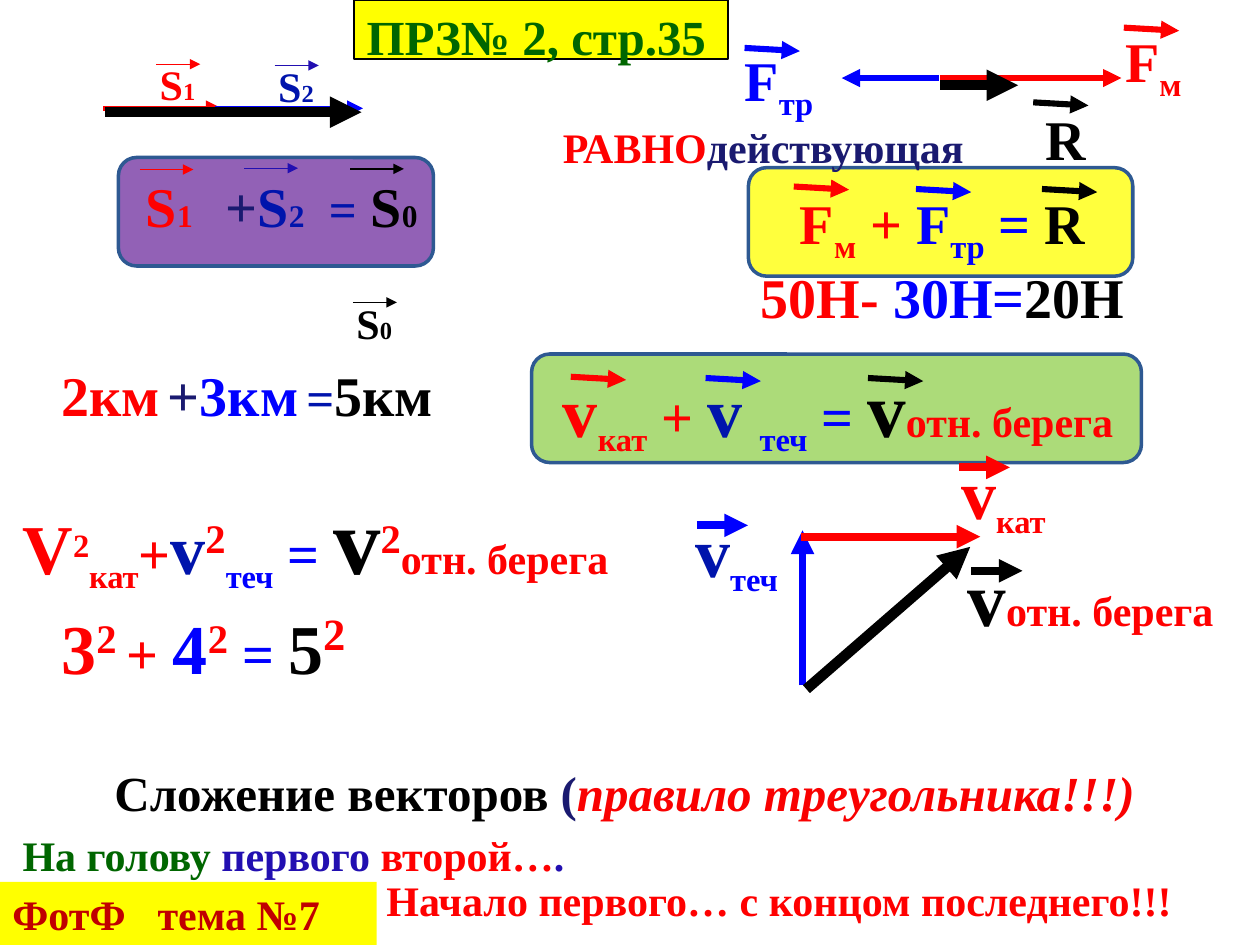
from lxml import etree
from pptx import Presentation
from pptx.dml.color import RGBColor
from pptx.enum import shapes, text
from pptx.oxml import ns
from pptx.util import Pt

RED = RGBColor(0xFF, 0x00, 0x00)
BLUE = RGBColor(0x00, 0x00, 0xFF)
NAVY = RGBColor(0x00, 0x14, 0xAC)
INDIGO = RGBColor(0x22, 0x0F, 0xB1)
DARK = RGBColor(0x1A, 0x1A, 0x70)
BLACK = RGBColor(0x00, 0x00, 0x00)
GREEN = RGBColor(0x00, 0x66, 0x00)
CRIMSON = RGBColor(0xC0, 0x00, 0x00)
SCARLET = RGBColor(0xF9, 0x01, 0x01)
YELLOW = RGBColor(0xFF, 0xFF, 0x00)
LIME = RGBColor(0x92, 0xD0, 0x50)
PURPLE = RGBColor(0x70, 0x30, 0xA0)
FRAME = RGBColor(0x2E, 0x59, 0x92)

FONT = "Times New Roman"
SUB, SUP = -25, 30

# left, top, width, height, fill
PANELS = [
    (303.8, 202.3, 348.5, 62, LIME),
    (427.7, 95.8, 219.6, 62, YELLOW),
    (67.7, 90, 180, 62, PURPLE),
]

# start x, start y, end x, end y, colour, weight
VECTORS = [
    (59, 61.9, 126.7, 61.9, RED, 3),
    (123.1, 61.9, 207.4, 61.9, BLUE, 3),
    (59.8, 64.1, 206.6, 64.1, BLACK, 6),
    (537.1, 44.6, 640.8, 44.6, RED, 3.5),
    (536.4, 44.6, 481, 44.6, BLUE, 3.5),
    (537.1, 48.7, 581.8, 48.7, BLACK, 6),
    (458.6, 391.7, 458.6, 303.1, BLUE, 4.5),
    (457.9, 306.7, 560.2, 306.7, RED, 4.5),
    (460.8, 393.8, 554.4, 312.5, BLACK, 6),
]

# Small arrows over letters: (length, drop, weight), then left, top, colour
MARKS = [
    ((25.2, 0, 0.75), [(89.3, 36.7, RED), (157, 37.4, INDIGO), (201.6, 172.8, BLACK)]),
    ((30.6, 0, 0.75), [(79.9, 96.9, RED), (139.7, 96.1, INDIGO), (200.2, 96.5, BLACK)]),
    ((31.6, 1.8, 3.5), [
        (523.4, 108, BLUE), (595.4, 108, BLACK), (453.6, 106.6, RED),
        (642.2, 15.8, RED), (425.5, 27.4, BLUE), (590.4, 58.5, BLACK),
        (403.2, 216, BLUE), (496, 216, BLACK), (326.2, 215.3, RED)]),
    ((29.2, 0, 4.5), [(555.1, 326.2, BLACK), (547.9, 267.1, RED), (398.2, 300.2, BLUE)]),
]

# (left, top, width, height), tab stops, spans of (text, size, colour, baseline, italic)
TEXTS = [
    ((84.2, 30.2, 45.4, 36), [], [("S", 24, RED), ("1", 14, RED)]),
    ((151.9, 31, 45.4, 36), [], [("S", 24, NAVY), ("2", 14, NAVY)]),
    ((76.3, 94.3, 185.8, 46), [45.6, 104.5], [
        ("S", 32, RED), ("1\t", 18, RED), ("+", 32, DARK), ("S", 32, NAVY),
        ("2\t", 18, NAVY), ("=", 28, NAVY), (" ", 32, NAVY),
        ("S", 32, BLACK), ("0", 18, BLACK)]),
    ((196.6, 166.3, 45.4, 36), [], [("S", 24, BLACK), ("0", 14, BLACK)]),
    ((450, 104.4, 195.1, 46), [], [
        ("F", 32, RED), ("м", 32, RED, SUB), (" + ", 32, RED), ("F", 32, BLUE),
        ("тр", 32, BLUE, SUB), (" = ", 32, BLUE), ("R", 32, BLACK)]),
    ((635.8, 11.5, 56.2, 46), [], [("F", 32, RED), ("м", 32, RED, SUB)]),
    ((418.4, 22.3, 62, 46), [], [("F", 32, BLUE), ("тр", 32, BLUE, SUB)]),
    ((590.4, 56.2, 50.4, 46), [], [("R", 32, BLACK)]),
    ((314.6, 66.2, 253.4, 36), [], [("РАВНО", 24, RED), ("действующая", 24, DARK)]),
    ((314.6, 202.3, 348.5, 60.5), [], [
        ("v", 40, RED), ("кат", 32, RED, SUB), (" + ", 32, RED), ("v ", 40, NAVY),
        ("теч", 32, BLUE, SUB), (" = ", 32, BLUE), ("v", 44, BLACK),
        ("отн. берега", 24, RED)]),
    ((545.8, 310.3, 191.5, 60.5), [], [("v", 44, BLACK), ("отн. берега", 24, RED)]),
    ((542.2, 253.4, 67.7, 55.4), [], [("v", 40, RED), ("кат", 32, RED, SUB)]),
    ((390.2, 286.6, 84.2, 55.4), [], [("v", 40, NAVY), ("теч", 32, BLUE, SUB)]),
    ((5.8, 470.2, 326.2, 36), [], [
        ("На голову ", 24, GREEN), ("первого ", 24, INDIGO),
        ("второй…", 24, RED), (".", 24, INDIGO)]),
    ((213.8, 496.1, 506.2, 36), [], [("Начало первого… с концом последнего!!!", 24, RED)]),
    ((58.3, 432, 658, 41), [], [
        ("Сложение векторов ", 28, BLACK), ("(", 28, DARK),
        ("правило треугольника!!!)", 28, SCARLET, 0, True)]),
    ((28.1, 202.3, 236.2, 46), [], [
        ("2км", 32, RED), (" ", 18, RED), ("+", 32, DARK), ("3км", 32, BLUE),
        (" ", 18, NAVY), ("=", 28, NAVY), ("5км", 32, BLACK)]),
    ((427.7, 146.2, 241.9, 46), [], [
        ("50Н- ", 32, RED), ("30Н=", 32, BLUE), ("20Н", 32, BLACK)]),
    ((28.1, 337.7, 196.6, 60.5), [], [
        ("3", 40, RED), ("2 ", 40, RED, SUP), ("+ ", 32, RED), ("4", 40, BLUE),
        ("2", 40, RED, SUP), (" = ", 32, BLUE), ("5", 40, BLACK), ("2", 44, RED, SUP)]),
    ((5.8, 270.7, 376.6, 72.7), [], [
        ("V", 40, RED), ("2", 32, RED, SUP), ("кат", 32, RED, SUB), ("+", 32, RED),
        ("v", 40, NAVY), ("2", 40, RED, SUP), ("теч", 32, BLUE, SUB), (" = ", 32, BLUE),
        ("v", 54, BLACK), ("2", 40, RED, SUP), ("отн. берега", 24, RED)]),
]

TITLE = ((202.3, 0, 213.8, 33.8), [("ПРЗ№ 2, стр.35", 28, GREEN)])
FOOTER = ((0, 504, 215.3, 36), [83], [("ФотФ\tтема №7", 24, CRIMSON)])


def points(values):
    return [Pt(value) for value in values]


def write(box, spans, tabs=()):
    frame = box.text_frame
    frame.word_wrap = True
    frame.auto_size = text.MSO_AUTO_SIZE.NONE
    frame.vertical_anchor = text.MSO_ANCHOR.TOP
    para = frame.paragraphs[0]
    para.alignment = text.PP_ALIGN.LEFT
    if tabs:
        stops = etree.SubElement(para._p.get_or_add_pPr(), ns.qn("a:tabLst"))
        for stop in tabs:
            etree.SubElement(stops, ns.qn("a:tab"), pos=str(Pt(stop)), algn="l")
    for words, size, colour, *extra in spans:
        span = para.add_run()
        span.text = words
        font = span.font
        font.name, font.size, font.bold = FONT, Pt(size), True
        font.color.rgb = colour
        baseline, italic = (extra + [0, False][len(extra):])
        if baseline:
            span._r.get_or_add_rPr().set("baseline", str(baseline * 1000))
        if italic:
            font.italic = True


def add_panel(page, kind, place, fill, line=None, opacity=None):
    box = page.shapes.add_shape(kind, *points(place))
    box.shadow.inherit = False
    box.fill.solid()
    box.fill.fore_color.rgb = fill
    if opacity:
        colour = box._element.spPr.find(".//" + ns.qn("a:srgbClr"))
        etree.SubElement(colour, ns.qn("a:alpha"), val=str(opacity * 1000))
    if line:
        box.line.color.rgb = line
        box.line.width = Pt(2)
    else:
        box.line.fill.background()
    return box


def add_arrow(page, ends, colour, weight):
    arrow = page.shapes.add_connector(shapes.MSO_CONNECTOR.STRAIGHT, *points(ends))
    arrow.line.color.rgb = colour
    arrow.line.width = Pt(weight)
    etree.SubElement(arrow.line._get_or_add_ln(), ns.qn("a:tailEnd"), type="triangle")
    etree.SubElement(arrow._element.spPr, ns.qn("a:effectLst"))


def main():
    deck = Presentation()
    deck.slide_width, deck.slide_height = Pt(720), Pt(540)
    page = deck.slides.add_slide(deck.slide_layouts[5])

    place, spans = TITLE
    title = page.shapes.title
    title.left, title.top, title.width, title.height = points(place)
    title.fill.solid()
    title.fill.fore_color.rgb = YELLOW
    title.line.color.rgb = BLACK
    title.line.width = Pt(0.75)
    write(title, spans)

    for *place, fill in PANELS:
        add_panel(page, shapes.MSO_SHAPE.ROUNDED_RECTANGLE, place, fill, FRAME, 76)
    for *ends, colour, weight in VECTORS:
        add_arrow(page, ends, colour, weight)
    for (length, drop, weight), marks in MARKS:
        for left, top, colour in marks:
            add_arrow(page, (left, top, left + length, top + drop), colour, weight)
    for place, tabs, spans in TEXTS:
        write(page.shapes.add_textbox(*points(place)), spans, tabs)

    place, tabs, spans = FOOTER
    write(add_panel(page, shapes.MSO_SHAPE.RECTANGLE, place, YELLOW), spans, tabs)
    deck.save("out.pptx")


if __name__ == "__main__":
    main()
